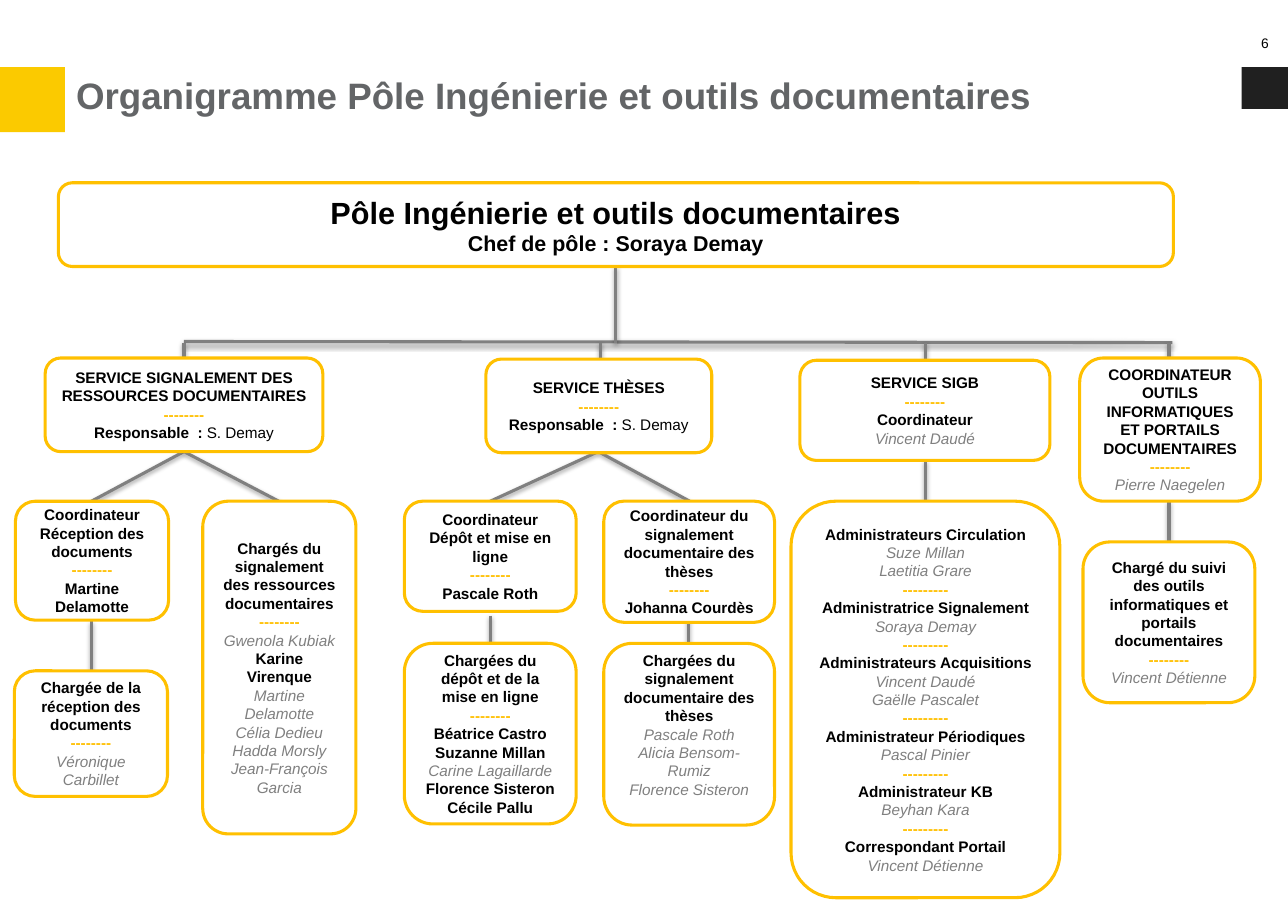
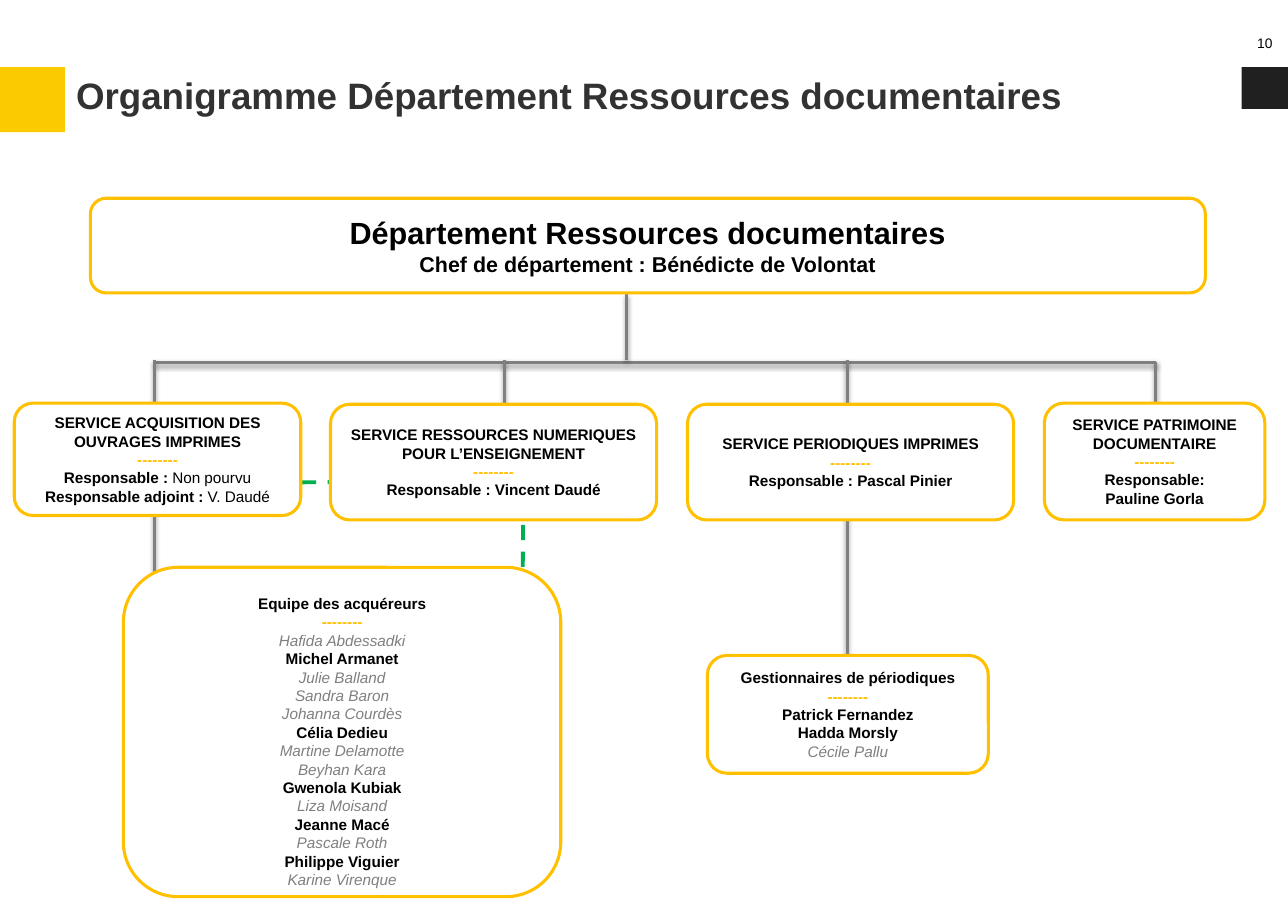
from lxml import etree
from pptx import Presentation
from pptx.dml.color import RGBColor
from pptx.enum import dml, shapes, text
from pptx.oxml import ns
from pptx.util import Inches, Pt

# Shared look
FONT = "Arial"
BLACK, GREY, GOLD, GREEN, WHITE = "000000", "808080", "FFC000", "00B050", "FFFFFF"
BANDS = [((11.27, 0.61, 0.42, 0.38), "202020"), ((0, 0.61, 0.59, 0.59), "FBCA00")]
TITLE_AREA = (0.59, 0.61, 11.09, 0.61)
NUMBER_AREA = (11.27, 0.17, 0.42, 0.44)
BLANK_LINE = 0.17
DASHES = "--------"
LONG_DASHES = "---------"

# Content. In a box, "~" marks an italic grey name and "|" ends the bold part of a line.
# Uprights are (x, top, bottom); slants and dashed links are (x1, y1, x2, y2).
CHARTS = [
    {
        "number": "6",
        "title": "Organigramme Pôle Ingénierie et outils documentaires",
        "title_color": "636567",
        "head": ((0.53, 1.66, 10.12, 0.76),
                 ["Pôle Ingénierie et outils documentaires", "Chef de pôle : Soraya Demay"]),
        "uprights": [(5.59, 2.42, 3.11), (1.67, 3.11, 3.58), (5.45, 3.11, 3.29),
                     (8.4, 3.11, 3.27), (10.61, 3.11, 3.58), (4.45, 5.59, 6.07),
                     (6.25, 5.59, 6.07), (10.61, 4.55, 4.92), (8.4, 4.18, 4.55),
                     (0.83, 5.64, 6.09)],
        "slants": [(1.67, 3.1, 10.64, 3.11), (1.67, 4.1, 0.83, 4.55), (1.67, 4.1, 2.53, 4.55),
                   (5.43, 4.1, 4.45, 4.55), (5.43, 4.1, 6.26, 4.55)],
        "dashed": [],
        "boxes": [
            ((0.41, 3.25, 2.52, 0.85),
             ["SERVICE SIGNALEMENT DES RESSOURCES DOCUMENTAIRES", DASHES,
              "Responsable  : |S. Demay"]),
            ((4.41, 3.26, 2.05, 0.85),
             ["SERVICE THÈSES", DASHES, "Responsable  : |S. Demay"]),
            ((7.26, 3.27, 2.27, 0.91),
             ["SERVICE SIGB", DASHES, "Coordinateur", "~Vincent Daudé"]),
            ((9.8, 3.25, 1.64, 1.3),
             ["COORDINATEUR OUTILS INFORMATIQUES ET PORTAILS DOCUMENTAIRES", DASHES,
              "~Pierre Naegelen"]),
            ((0.14, 4.55, 1.39, 1.08),
             ["Coordinateur Réception des documents", DASHES, "Martine Delamotte"]),
            ((0.13, 6.09, 1.39, 1.14),
             ["Chargée de la réception des documents", DASHES, "~Véronique Carbillet"]),
            ((1.84, 4.55, 1.39, 3.02),
             ["Chargés du signalement des ressources documentaires", DASHES,
              "~Gwenola Kubiak", "Karine Virenque", "~Martine Delamotte", "~Célia Dedieu",
              "~Hadda Morsly", "~Jean-François Garcia"]),
            ((3.67, 4.55, 1.56, 1),
             ["Coordinateur Dépôt et mise en ligne", DASHES, "Pascale Roth"]),
            ((3.67, 5.84, 1.56, 1.64),
             ["Chargées du dépôt et de la mise en ligne", DASHES, "Béatrice Castro",
              "Suzanne Millan", "~Carine Lagaillarde", "Florence Sisteron", "Cécile Pallu"]),
            ((5.48, 4.55, 1.55, 1.1),
             ["Coordinateur du signalement documentaire des thèses", DASHES,
              "Johanna Courdès"]),
            ((5.48, 5.84, 1.55, 1.65),
             ["Chargées du signalement documentaire des thèses", "~Pascale Roth",
              "~Alicia Bensom-Rumiz", "~Florence Sisteron"], 0, BLANK_LINE),
            ((7.18, 4.55, 2.44, 3.6),
             ["Administrateurs Circulation", "~Suze Millan", "~Laetitia Grare", LONG_DASHES,
              "Administratrice Signalement", "~Soraya Demay", LONG_DASHES,
              "Administrateurs Acquisitions", "~Vincent Daudé", "~Gaëlle Pascalet", LONG_DASHES,
              "Administrateur Périodiques", "~Pascal Pinier", LONG_DASHES,
              "Administrateur KB", "~Beyhan Kara", LONG_DASHES,
              "Correspondant Portail", "~Vincent Détienne"]),
            ((9.83, 4.92, 1.56, 1.46),
             ["Chargé du suivi des outils informatiques et portails documentaires", DASHES,
              "~Vincent Détienne"]),
        ],
    },
    {
        "number": "10",
        "title": "Organigramme Département Ressources documentaires",
        "title_color": "333233",
        "head": ((0.82, 1.8, 10.12, 0.86),
                 ["Département Ressources documentaires",
                  "Chef de département : Bénédicte de Volontat"]),
        "uprights": [(5.69, 2.67, 3.27), (1.4, 3.27, 4.07), (4.58, 3.27, 4.34),
                     (7.69, 3.27, 4.34), (10.49, 3.29, 4.36), (1.4, 4.44, 5.95),
                     (7.69, 4.68, 5.95)],
        "slants": [(1.4, 3.29, 10.49, 3.29)],
        "dashed": [(3.84, 4.37, 2.62, 4.38), (4.75, 4.28, 4.74, 6.1)],
        "boxes": [
            ((0.13, 3.66, 2.6, 1.02),
             ["SERVICE ACQUISITION DES OUVRAGES IMPRIMES", DASHES,
              "Responsable : |Non pourvu", "Responsable adjoint : |V. Daudé"]),
            ((3, 3.67, 2.96, 1.05),
             ["SERVICE RESSOURCES NUMERIQUES POUR L’ENSEIGNEMENT", DASHES,
              "Responsable : Vincent Daudé"]),
            ((6.24, 3.67, 2.96, 1.05),
             ["SERVICE PERIODIQUES IMPRIMES", DASHES, "Responsable : Pascal Pinier"]),
            ((9.48, 3.66, 2, 1.06),
             ["SERVICE PATRIMOINE DOCUMENTAIRE", DASHES, "Responsable:", "Pauline Gorla"]),
            ((1.12, 5.15, 3.97, 2.99),
             ["Equipe des acquéreurs", DASHES, "~Hafida Abdessadki", "Michel Armanet",
              "~Julie Balland", "~Sandra Baron", "~Johanna Courdès", "Célia Dedieu",
              "~Martine Delamotte", "~Beyhan Kara", "Gwenola Kubiak", "~Liza Moisand",
              "Jeanne Macé", "~Pascale Roth", "Philippe Viguier", "~Karine Virenque"],
             BLANK_LINE, 0),
            ((6.42, 5.95, 2.55, 1.07),
             ["Gestionnaires de périodiques", DASHES, "Patrick Fernandez", "Hadda Morsly",
              "~Cécile Pallu"]),
        ],
    },
]


def rgb(color):
    return RGBColor.from_string(color)


def inches(values):
    return [Inches(value) for value in values]


def add_run(paragraph, words, size, color=BLACK, bold=False, italic=False):
    run = paragraph.add_run()
    run.text = words
    font = run.font
    font.name, font.size, font.bold, font.italic = FONT, Pt(size), bold, italic
    font.color.rgb = rgb(color)


def set_frame(frame, left, top, right, bottom, anchor=text.MSO_ANCHOR.MIDDLE):
    frame.word_wrap = True
    frame.auto_size = text.MSO_AUTO_SIZE.NONE
    frame.vertical_anchor = anchor
    frame.margin_left, frame.margin_top, frame.margin_right, frame.margin_bottom = inches(
        (left, top, right, bottom))


def write_line(paragraph, line, size):
    paragraph.alignment = text.PP_ALIGN.CENTER
    if line.startswith("~"):
        add_run(paragraph, line[1:], size, GREY, italic=True)
        return
    label, _, holder = line.partition("|")
    add_run(paragraph, label, size, GOLD if line.startswith("--") else BLACK, bold=True)
    if holder:
        add_run(paragraph, holder, size)


def add_box(slide, area, lines, space_above=0, space_below=0, sizes=()):
    box = slide.shapes.add_shape(shapes.MSO_SHAPE.ROUNDED_RECTANGLE, *inches(area))
    box.shadow.inherit = False
    box.fill.solid()
    box.fill.fore_color.rgb = rgb(WHITE)
    box.line.color.rgb = rgb(GOLD)
    box.line.width = Pt(2)
    frame = box.text_frame
    set_frame(frame, 0.1, 0.05 + space_above, 0.1, 0.05 + space_below)
    for index, line in enumerate(lines):
        paragraph = frame.add_paragraph() if index else frame.paragraphs[0]
        write_line(paragraph, line, sizes[index] if sizes else 10)


def add_link(slide, x1, y1, x2, y2, dashed=False):
    link = slide.shapes.add_connector(shapes.MSO_CONNECTOR.STRAIGHT, *inches((x1, y1, x2, y2)))
    link.line.color.rgb = rgb(GREEN if dashed else GREY)
    link.line.width = Pt(2.5 if dashed else 2)
    if dashed:
        link.line.dash_style = dml.MSO_LINE.DASH
    effects = etree.SubElement(link.element.spPr, ns.qn("a:effectLst"))
    if not dashed:
        shadow = etree.SubElement(
            effects, ns.qn("a:outerShdw"), blurRad=str(Pt(3.1)), dist=str(Pt(1.6)),
            dir="5400000", rotWithShape="0")
        tint = etree.SubElement(shadow, ns.qn("a:srgbClr"), val=BLACK)
        etree.SubElement(tint, ns.qn("a:alpha"), val="38000")


def add_bands(layout, slide):
    """Draw the bands once and move them to the layout, behind its placeholders."""
    for area, color in BANDS:
        band = slide.shapes.add_shape(shapes.MSO_SHAPE.RECTANGLE, *inches(area))
        band.shadow.inherit = False
        band.fill.solid()
        band.fill.fore_color.rgb = rgb(color)
        band.line.fill.background()
        layout.shapes.element.insert(2, band.element)


def add_title(slide, chart):
    title = slide.shapes.title
    title.left, title.top, title.width, title.height = inches(TITLE_AREA)
    set_frame(title.text_frame, 0.1, 0.05, 0.1, 0.05, text.MSO_ANCHOR.TOP)
    heading = title.text_frame.paragraphs[0]
    heading.alignment = text.PP_ALIGN.LEFT
    add_run(heading, chart["title"], 24, chart["title_color"], bold=True)


def add_number(slide, number):
    frame = slide.shapes.add_textbox(*inches(NUMBER_AREA)).text_frame
    set_frame(frame, 0.11, 0.06, 0.11, 0.06)
    frame.paragraphs[0].alignment = text.PP_ALIGN.CENTER
    add_run(frame.paragraphs[0], number, 9)


def build_chart(slide, chart):
    add_title(slide, chart)
    add_number(slide, chart["number"])
    # Links go first so that the boxes cover their ends
    for link in chart["dashed"]:
        add_link(slide, *link, dashed=True)
    for link in chart["slants"]:
        add_link(slide, *link)
    for x, top, bottom in chart["uprights"]:
        add_link(slide, x, top, x, bottom)
    add_box(slide, *chart["head"], sizes=(20, 14))
    for box in chart["boxes"]:
        add_box(slide, *box)


def main():
    deck = Presentation()
    deck.slide_width, deck.slide_height = inches((11.69, 8.27))
    layout = deck.slide_layouts[5]
    for index, chart in enumerate(CHARTS):
        slide = deck.slides.add_slide(layout)
        if index == 0:
            add_bands(layout, slide)
        build_chart(slide, chart)
    deck.save("out.pptx")


if __name__ == "__main__":
    main()
